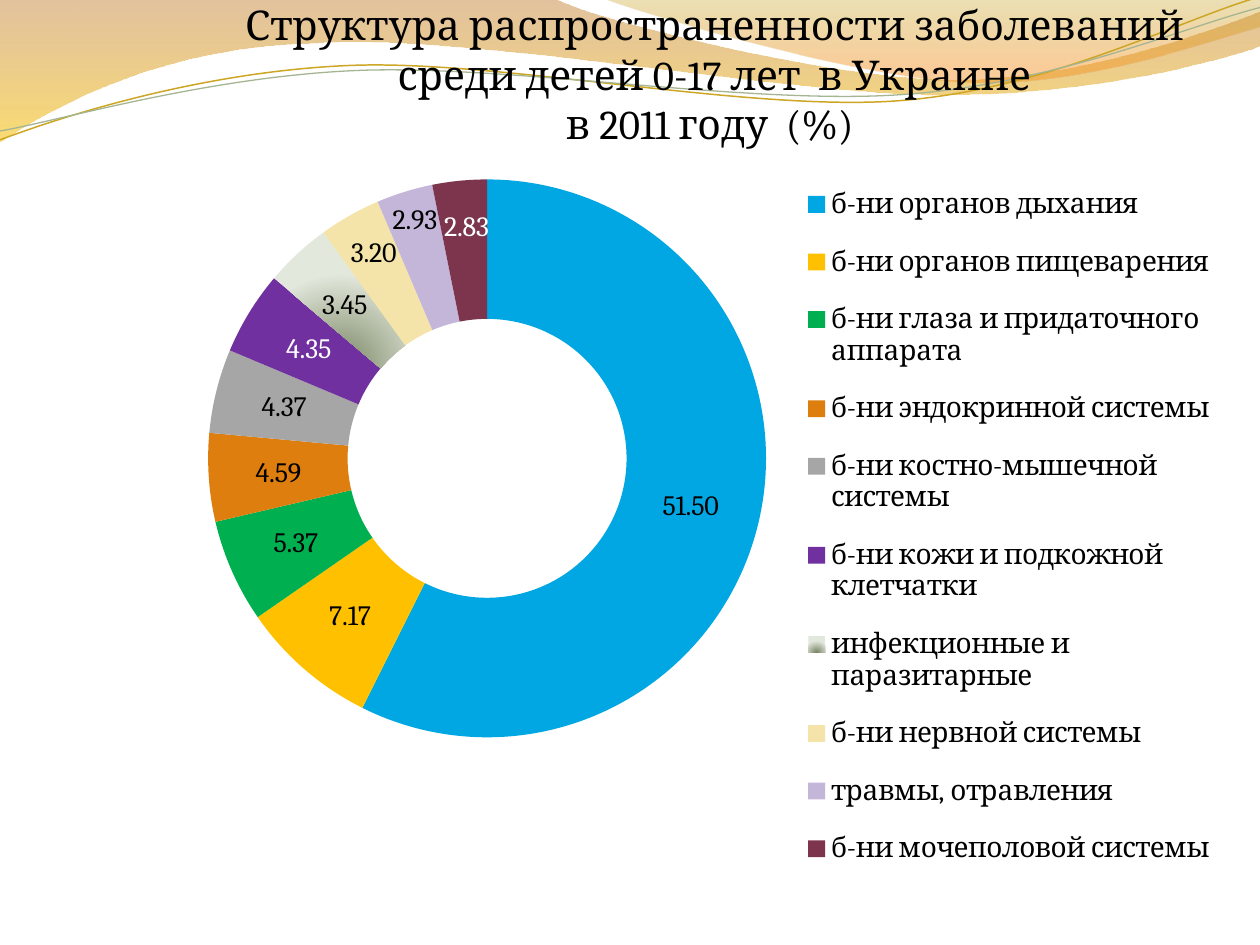
"""Build a slide with a doughnut chart of childhood diseases below a wave band."""
from math import cos, sin, radians

from lxml.etree import SubElement as Sub
from pptx import Presentation
from pptx.chart.data import CategoryChartData as Data
from pptx.dml.color import RGBColor as RGB
from pptx.enum.chart import XL_CHART_TYPE as Kind, XL_LEGEND_POSITION as Side
from pptx.enum.text import MSO_ANCHOR as Anchor, MSO_AUTO_SIZE as Fit, PP_ALIGN as Align
from pptx.oxml import parse_xml as to_xml
from pptx.oxml.ns import nsdecls, qn
from pptx.util import Inches, Pt

BLACK = RGB(0, 0, 0)
WHITE = RGB(255, 255, 255)
BROWN = RGB(0xC0, 0x7A, 0x28)
YELLOW = RGB(0xF7, 0xBF, 0x00)
OLIVE = RGB(0xC0, 0x97, 0x09)
ORANGE = RGB(0xF5, 0x93, 0x20)
GOLD = RGB(0xCC, 0xA6, 0x24)
SAGE = RGB(0xA5, 0xB5, 0x92)
MOSS = RGB(0x78, 0x84, 0x62)
MIST = RGB(0xE2, 0xE8, 0xDC)

HEAD = ("Структура распространенности заболеваний",
        " среди детей 0-17 лет  в Украине ",
        "в 2011 году  (%) ")

ROWS = (
    ("б-ни органов дыхания", 51.5, RGB(0x00, 0xA7, 0xE2), BLACK, None),
    ("б-ни органов пищеварения", 7.17, RGB(0xFF, 0xC0, 0x00), BLACK, None),
    ("б-ни глаза и придаточного аппарата", 5.37, RGB(0x00, 0xB0, 0x50), BLACK, None),
    ("б-ни эндокринной системы", 4.59, RGB(0xDD, 0x7E, 0x0E), BLACK, None),
    ("б-ни костно-мышечной системы", 4.37, RGB(0xA6, 0xA6, 0xA6), BLACK, None),
    ("б-ни кожи и подкожной клетчатки", 4.35, RGB(0x70, 0x30, 0xA0), WHITE, None),
    ("инфекционные и паразитарные", 3.45, None, BLACK, None),
    ("б-ни нервной системы", 3.2, RGB(0xF5, 0xE4, 0xA9), BLACK, (-0.01, -0.03)),
    ("травмы, отравления", 2.93, RGB(0xC4, 0xB6, 0xD9), BLACK, (-0.01, -0.05)),
    ("б-ни мочеполовой системы", 2.83, RGB(0x7C, 0x35, 0x4D), WHITE, (0, -0.03)),
)

LEFT = ((0, 0), (4.4, -0.01), (4.76, 0.17, 6.64, 0.63, 7.58, 0.63),
        (8.53, 0.63, 9.58, 0.26, 10, 0.09), (10.01, 0.36),
        (9.83, 0.44, 8.7, 0.76, 7.46, 0.75), (6.22, 0.75, 3.82, 0.28, 2.57, 0.34),
        (1.29, 0.36, 0.46, 0.83, -0.01, 1.13))
RIGHT = ((4.79, -0.01), (5.09, 0.11, 6.82, 0.62, 7.69, 0.65),
         (8.56, 0.69, 9.61, 0.32, 10, 0.21), (10, 0))
UPPER = ((0, 1.11), (0.48, 0.93, 1.58, 0.57, 2.77, 0.52),
         (3.95, 0.47, 5.93, 0.89, 7.13, 0.8), (8.33, 0.71, 9.38, 0.15, 9.98, -0.02))
LOWER = ((0, 1.04), (0.47, 0.96, 1.64, 0.61, 2.83, 0.56),
         (4.03, 0.51, 5.97, 0.84, 7.17, 0.75), (8.36, 0.67, 9.41, 0.21, 10, 0.06))


def pairs(seg):
    """Split a flat segment into points."""
    return list(zip(seg[::2], seg[1::2]))


def spin(segs, deg, mid):
    """Turn segments clockwise about a middle point."""
    c, s = cos(radians(deg)), sin(radians(deg))
    turned = []
    for seg in segs:
        near = [(x - mid[0], y - mid[1]) for x, y in pairs(seg)]
        turned.append(tuple(v for x, y in near
                            for v in (mid[0] + x * c - y * s, mid[1] + x * s + y * c)))
    return turned


def place(x, y, w=None, h=None, aim=""):
    """Return a chart layout in shares: a box, or a shift when no size is given."""
    modes = '<c:xMode val="edge"/><c:yMode val="edge"/>' if w else ""
    vals = "".join(f'<c:{k} val="{v}"/>' for k, v in zip("xywh", (x, y, w, h))
                   if v is not None)
    return to_xml(f'<c:layout {nsdecls("c")}><c:manualLayout>{aim}{modes}{vals}'
                  '</c:manualLayout></c:layout>')


def drop(node):
    """Remove the layouts directly under a chart node."""
    for old in node.findall(qn("c:layout")):
        node.remove(old)


class Deck:
    """Hold the style and the current slide, on a grid of 10 by 7.5 cells."""

    font = "Cambria"

    def __init__(self):
        """Open a deck with one title-only slide."""
        self.prs = Presentation()
        self.prs.slide_width, self.prs.slide_height = Inches(10), Inches(7.5)
        self.col, self.row = self.prs.slide_width / 10, self.prs.slide_height / 7.5
        self.slide = self.prs.slides.add_slide(self.prs.slide_layouts[5])

    def spot(self, x, y):
        """Turn grid units into lengths."""
        return round(x * self.col), round(y * self.row)

    def style(self, font, size, color=BLACK):
        """Set typeface, size and colour of a font."""
        font.name, font.size, font.color.rgb = self.font, Pt(size), color

    def draw(self, segs, close):
        """Add an outline of straight and cubic segments."""
        first, *rest = [self.spot(*seg[-2:]) for seg in segs]
        pen = self.slide.shapes.build_freeform(*first)
        pen.add_line_segments(rest, close=close)
        shape = pen.convert_to_shape()
        shape.shadow.inherit = False
        lines = list(shape._element.iter(qn("a:lnTo")))
        for line, seg in zip(lines, segs[1:]):
            if len(seg) == 2:
                continue
            bend = to_xml(f'<a:cubicBezTo {nsdecls("a")}/>')
            for dot in pairs(seg):
                x, y = self.spot(*dot)
                Sub(bend, qn("a:pt"), x=str(x - pen.shape_offset_x),
                    y=str(y - pen.shape_offset_y))
            line.getparent().replace(line, bend)
        return shape

    def wave(self, segs, *stops):
        """Add a closed wave with a see-through fill that fades downwards."""
        shape = self.draw(segs, True)
        shape.line.fill.background()
        fill = shape.fill
        fill.gradient()
        fill.gradient_angle = 270
        for stop, (pos, color, alpha) in zip(fill.gradient_stops, stops):
            stop.position, stop.color.rgb = pos, color
            tint = stop._gs.find(qn("a:srgbClr"))
            Sub(tint, qn("a:alpha"), val=str(alpha * 1000))

    def curve(self, segs, color, width, mid):
        """Add a thin open curve, tilted about its middle."""
        tilt = 2.7
        shape = self.draw(spin(segs, tilt, mid), False)
        shape.rotation = 360 - tilt
        shape.fill.background()
        shape.line.color.rgb, shape.line.width = color, Pt(width)

    def title(self, lines, x, y, w, h):
        """Fill the title placeholder and bring it to the front."""
        box = self.slide.shapes.title
        box.left, box.top = self.spot(x, y)
        box.width, box.height = self.spot(w, h)
        self.slide.shapes._spTree.append(box._element)
        frame = box.text_frame
        frame.word_wrap, frame.auto_size = True, Fit.NONE
        frame.vertical_anchor = Anchor.BOTTOM
        frame.margin_left = frame.margin_right = frame.margin_bottom = 0
        frame.margin_top = Inches(0.05)
        para = frame.paragraphs[0]
        para.alignment, para.line_spacing = Align.CENTER, 1.0
        for i, line in enumerate(lines):
            if i:
                para.add_line_break()
            run = para.add_run()
            run.text = line
            self.style(run.font, 23.4)

    def glow(self, fill):
        """Fade a fill outwards from the bottom middle."""
        fill.gradient()
        for stop, color in zip(fill.gradient_stops, (MOSS, MIST)):
            stop.color.rgb = color
        grad = fill._xPr.find(qn("a:gradFill"))
        ray = to_xml(f'<a:path {nsdecls("a")} path="circle">'
                     '<a:fillToRect l="50000" t="100000" r="50000" b="0"/></a:path>')
        grad.replace(grad.find(qn("a:lin")), ray)

    def ring(self, rows, x, y, w, h):
        """Add a doughnut chart with values and a legend."""
        data = Data(number_format="0.00")
        data.categories = [r[0] for r in rows]
        data.add_series("Series 1", [r[1] for r in rows])
        chart = self.slide.shapes.add_chart(
            Kind.DOUGHNUT, *self.spot(x, y), *self.spot(w, h), data).chart
        self.style(chart.font, 18)
        chart.has_title, chart.has_legend = False, True
        key = chart.legend
        key.position, key.include_in_layout = Side.RIGHT, False
        self.style(key.font, 16)
        drop(key._element)
        key._element.find(qn("c:legendPos")).addnext(place(0.58, 0.02, 0.41, 0.96))
        plot = chart.plots[0]
        plot.vary_by_categories = True
        area = plot._element.getparent()
        drop(area)
        area.insert(0, place(0.01, 0.04, 0.54, 0.74, '<c:layoutTarget val="inner"/>'))
        ser = plot.series[0]
        tags = ser.data_labels
        tags.show_value, tags.show_percentage = True, False
        tags.number_format, tags.number_format_is_linked = "0.00", False
        self.style(tags.font, 16)
        for i, (_, _, color, ink, shift) in enumerate(rows):
            part = ser.points[i]
            if color is None:
                self.glow(part.format.fill)
            else:
                part.format.fill.solid()
                part.format.fill.fore_color.rgb = color
            if shift or ink != BLACK:
                self.style(part.data_label.font, 16, ink)
            if shift:
                tag = tags._element.findall(qn("c:dLbl"))[-1]
                tag.find(qn("c:idx")).addnext(place(*shift))


def main():
    """Build and save the slide."""
    deck = Deck()
    deck.wave(LEFT, (0, BROWN, 45), (1, YELLOW, 55))
    deck.wave(RIGHT, (0, OLIVE, 30), (0.8, ORANGE, 45))
    deck.curve(UPPER, GOLD, 0.85, (4.99, 0.58))
    deck.curve(LOWER, SAGE, 0.75, (5, 0.59))
    deck.title(HEAD, 1.57, 0, 8.2, 1.17)
    deck.ring(ROWS, 1.57, 1.17, 8.2, 6.02)
    deck.prs.save("out.pptx")


if __name__ == "__main__":
    main()
